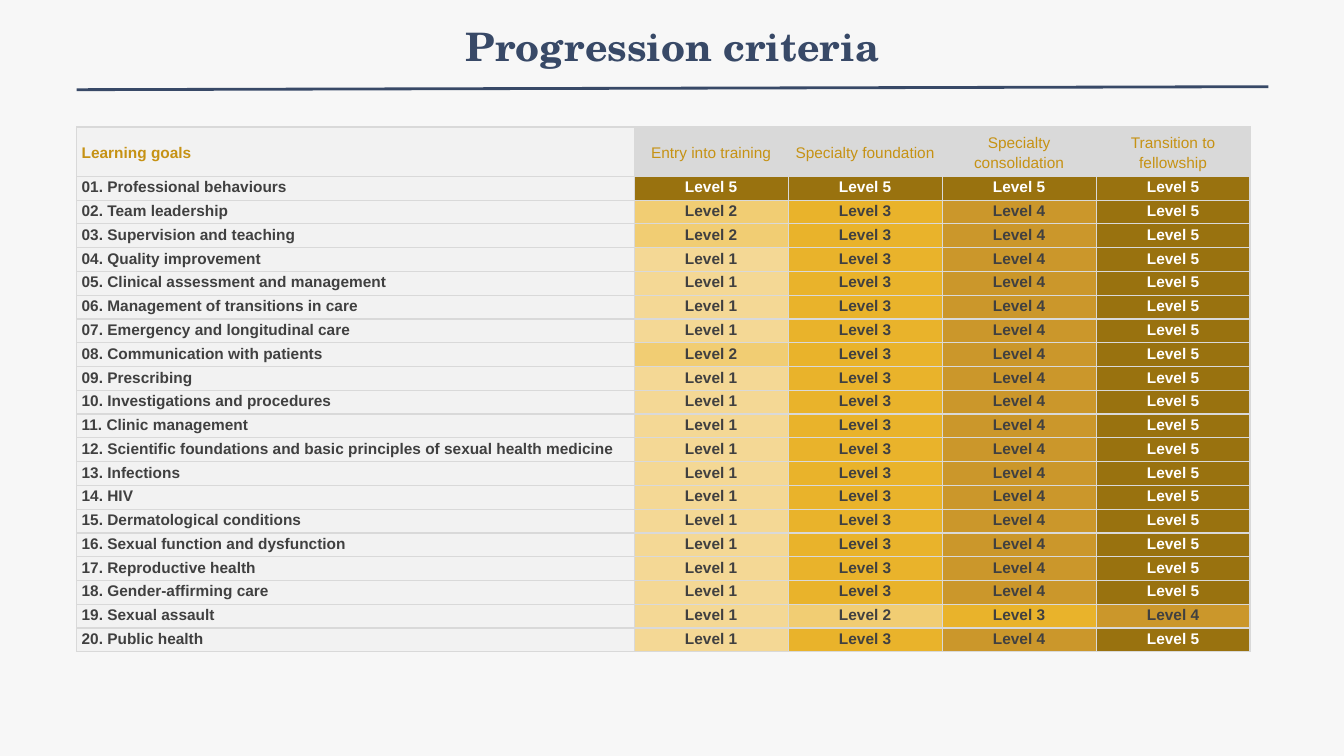
from typing import NamedTuple

from lxml import etree
from pptx import Presentation
from pptx.dml.color import RGBColor
from pptx.enum import shapes, text
from pptx.oxml import ns
from pptx.util import Inches, Pt

NAVY, GOLD, DARK, WHITE = "384967", "C69214", "404040", "FFFFFF"
PALE, GREY, PAGE = "F2F2F2", "D9D9D9", "F7F7F7"
FILLS = {1: "F4D895", 2: "F1CD73", 3: "E9B32B", 4: "CB972B", 5: "99720F"}
LEFT, MID = text.PP_ALIGN.LEFT, text.PP_ALIGN.CENTER
WIDTH, HEIGHT, GOAL_W, HEAD_H = 11.64, 5.21, 5.53, 0.49


class Goal(NamedTuple):
    name: str
    levels: tuple[int, ...] = (1, 3, 4, 5)


class Style(NamedTuple):
    fill: str
    color: str
    bold: bool = True
    align: text.PP_ALIGN = MID
    after: int = 2
    anchor: text.MSO_ANCHOR = text.MSO_ANCHOR.TOP


STAGES = ("Entry into training", "Specialty foundation",
          "Specialty consolidation", "Transition to fellowship")
GOALS = (
    Goal("Professional behaviours", (5, 5, 5, 5)),
    Goal("Team leadership", (2, 3, 4, 5)),
    Goal("Supervision and teaching", (2, 3, 4, 5)),
    Goal("Quality improvement"),
    Goal("Clinical assessment and management"),
    Goal("Management of transitions in care"),
    Goal("Emergency and longitudinal care"),
    Goal("Communication with patients", (2, 3, 4, 5)),
    Goal("Prescribing"),
    Goal("Investigations and procedures"),
    Goal("Clinic management"),
    Goal("Scientific foundations and basic principles of sexual health medicine"),
    Goal("Infections"),
    Goal("HIV"),
    Goal("Dermatological conditions"),
    Goal("Sexual function and dysfunction"),
    Goal("Reproductive health"),
    Goal("Gender-affirming care"),
    Goal("Sexual assault", (1, 2, 3, 4)),
    Goal("Public health"),
)


def paint(target, color: str) -> None:
    """Give a fill or line format one solid colour."""
    target.solid()
    target.fore_color.rgb = RGBColor.from_string(color)


def add_borders(cell) -> None:
    props = cell._tc.get_or_add_tcPr()
    for side in ("lnL", "lnR", "lnT", "lnB"):
        line = etree.SubElement(props, ns.qn(f"a:{side}"), w=str(Pt(1)))
        fill = etree.SubElement(line, ns.qn("a:solidFill"))
        etree.SubElement(fill, ns.qn("a:srgbClr"), val=GREY)


def fill_cell(cell, words: str, style: Style) -> None:
    add_borders(cell)
    paint(cell.fill, style.fill)
    cell.margin_left = cell.margin_right = Inches(0.05)
    cell.margin_top = cell.margin_bottom = 0
    cell.vertical_anchor = style.anchor
    cell.text = words
    para = cell.text_frame.paragraphs[0]
    para.alignment = style.align
    para.line_spacing = 1.15
    para.space_after = Pt(style.after)
    para.font.name, para.font.size = "Arial", Pt(11)
    para.font.bold = style.bold
    paint(para.font.fill, style.color)


def add_title(slide) -> None:
    title = slide.shapes.title
    title.left, title.top = Inches(2.17), Inches(0.17)
    title.width, title.height = Inches(9), Inches(1.25)
    frame = title.text_frame
    frame.text = "Progression criteria"
    frame.auto_size = text.MSO_AUTO_SIZE.NONE
    frame.vertical_anchor = text.MSO_ANCHOR.TOP
    para = frame.paragraphs[0]
    para.alignment = MID
    para.font.name, para.font.size = "TeX Gyre Schola", Pt(28)
    para.font.bold = True
    paint(para.font.fill, NAVY)


def add_rule(slide) -> None:
    rule = slide.shapes.add_connector(
        shapes.MSO_CONNECTOR.STRAIGHT,
        Inches(0.76), Inches(0.89), Inches(12.58), Inches(0.86))
    paint(rule.line.fill, NAVY)
    rule.line.width = Pt(2)
    etree.SubElement(rule._element.spPr, ns.qn("a:effectLst"))


def add_grid(slide) -> None:
    grid = slide.shapes.add_table(
        len(GOALS) + 1, len(STAGES) + 1,
        Inches(0.76), Inches(1.26), Inches(WIDTH), Inches(HEIGHT)).table
    grid.first_row = grid.horz_banding = False
    for i, col in enumerate(grid.columns):
        col.width = Inches((WIDTH - GOAL_W) / len(STAGES) if i else GOAL_W)
    for i, row in enumerate(grid.rows):
        row.height = Inches((HEIGHT - HEAD_H) / len(GOALS) if i else HEAD_H)

    head = Style(GREY, GOLD, False, MID, 4, text.MSO_ANCHOR.MIDDLE)
    fill_cell(grid.cell(0, 0), "Learning goals",
              head._replace(fill=PALE, bold=True, align=LEFT))
    for c, stage in enumerate(STAGES, 1):
        fill_cell(grid.cell(0, c), stage, head)
    for r, goal in enumerate(GOALS, 1):
        fill_cell(grid.cell(r, 0), f"{r:02}. {goal.name}",
                  Style(PALE, DARK, align=LEFT))
        for c, level in enumerate(goal.levels, 1):
            color = WHITE if level == 5 else DARK
            fill_cell(grid.cell(r, c), f"Level {level}",
                      Style(FILLS[level], color))


def main() -> None:
    deck = Presentation()
    deck.slide_width, deck.slide_height = Inches(13.33), Inches(7.5)
    slide = deck.slides.add_slide(deck.slide_layouts[5])
    paint(slide.background.fill, PAGE)
    add_title(slide)
    add_rule(slide)
    add_grid(slide)
    deck.save("out.pptx")


if __name__ == "__main__":
    main()
